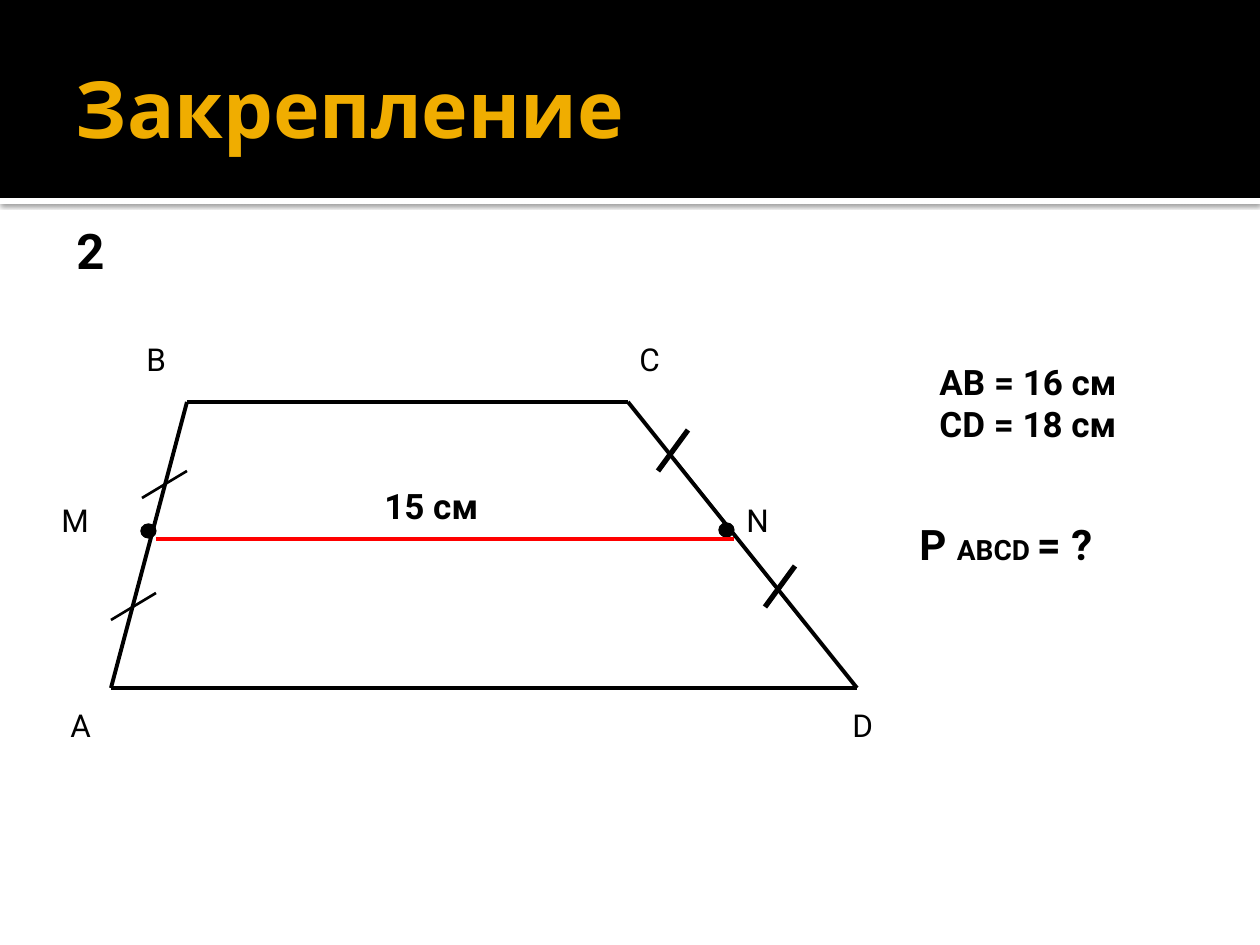
from dataclasses import dataclass

from lxml.etree import SubElement
from pptx import Presentation
from pptx.dml.color import RGBColor as Rgb
from pptx.enum.shapes import MSO_CONNECTOR as Conn, MSO_SHAPE as Kind
from pptx.enum.text import MSO_ANCHOR as Anchor, MSO_AUTO_SIZE as Fit, PP_ALIGN as Align
from pptx.oxml.ns import qn
from pptx.util import Pt


@dataclass(frozen=True)
class Theme:
    black: str = "000000"
    white: str = "FFFFFF"
    gold: str = "F0AD00"
    red: str = "FF0000"
    head: str = "Cabin"
    body: str = "Roboto"
    title: int = 45
    number: int = 28
    ask: int = 24
    given: int = 20
    label: int = 18
    sub: int = 16
    thin: float = 1.5
    side: float = 2.25
    thick: float = 3


def px(n):
    return round(n * 914400 / 126)


class Board:
    def __init__(self, deck, theme):
        self.theme = theme
        self.slide = deck.slides.add_slide(deck.slide_layouts[5])
        self.shapes = self.slide.shapes

    def style(self, run, size, bold=False, color=None, face=None):
        look = {"size": Pt(size), "bold": bold, "name": face or self.theme.body}
        for key, value in look.items():
            setattr(run.font, key, value)
        run.font.color.rgb = Rgb.from_string(color or self.theme.black)

    def title(self, text, *box):
        item = self.shapes.title
        item.element.getparent().append(item.element)
        for key, value in zip(("left", "top", "width", "height"), box):
            setattr(item, key, px(value))
        frame = item.text_frame
        look = {"margin_left": px(13), "margin_top": px(6), "margin_right": px(6),
                "margin_bottom": px(6), "vertical_anchor": Anchor.MIDDLE,
                "word_wrap": True, "auto_size": Fit.NONE}
        for key, value in look.items():
            setattr(frame, key, value)
        para = frame.paragraphs[0]
        para.alignment = Align.LEFT
        run = para.add_run()
        run.text = text
        self.style(run, self.theme.title, True, self.theme.gold, self.theme.head)

    def text(self, lines, *box, bold=True, wrap=True):
        frame = self.shapes.add_textbox(*map(px, box)).text_frame
        frame.word_wrap = wrap
        frame.auto_size = Fit.SHAPE_TO_FIT_TEXT
        for i, line in enumerate(lines):
            para = frame.add_paragraph() if i else frame.paragraphs[0]
            for words, size in line:
                run = para.add_run()
                run.text = words
                self.style(run, size, bold)

    def label(self, name, x, y):
        self.text([[(name, self.theme.label)]], x, y, 60, 50, bold=False)

    def shape(self, kind, color, *box):
        item = self.shapes.add_shape(kind, *map(px, box))
        item.shadow.inherit = False
        item.fill.solid()
        item.fill.fore_color.rgb = Rgb.from_string(color)
        item.line.fill.background()
        return item

    def band(self, color, top, height, shade=False):
        item = self.shape(Kind.RECTANGLE, color, 0, top, 1260, height)
        if shade:
            effects = item.element.spPr.find(qn("a:effectLst"))
            cast = SubElement(effects, qn("a:outerShdw"), blurRad="31750",
                              dist="10160", dir="5400000", rotWithShape="0")
            tint = SubElement(cast, qn("a:srgbClr"), val=self.theme.black)
            SubElement(tint, qn("a:alpha"), val="60000")

    def dot(self, x, y):
        item = self.shape(Kind.FLOWCHART_CONNECTOR, self.theme.black, x, y, 15, 14)
        item.line.color.rgb = Rgb.from_string(self.theme.black)
        item.line.width = Pt(0.75)

    def line(self, start, end, width, color=None):
        item = self.shapes.add_connector(Conn.STRAIGHT, *map(px, start + end))
        item.line.color.rgb = Rgb.from_string(color or self.theme.black)
        item.line.width = Pt(width)
        SubElement(item.element.spPr, qn("a:effectLst"))


def main():
    deck = Presentation()
    deck.slide_width, deck.slide_height = px(1260), px(945)
    theme = Theme()
    board = Board(deck, theme)

    board.band(theme.white, 198, 6, shade=True)
    board.band(theme.black, 0, 198)
    board.title("Закрепление", 63, 21, 1134, 173)

    for name, x, y in (("M", 49, 495), ("N", 734, 495), ("A", 58, 700),
                       ("D", 840, 700), ("B", 134, 334), ("C", 627, 334)):
        board.label(name, x, y)
    for x, y in ((141, 524), (719, 523)):
        board.dot(x, y)

    a, b, c, d = (111, 688), (187, 402), (628, 402), (857, 688)
    for start, end in ((a, d), (c, d), (b, c), (b, a)):
        board.line(start, end, theme.side)
    for x, y in ((187, 471), (156, 593)):
        board.line((x, y), (x - 45, y + 27), theme.thin)
    board.line((156, 539), (734, 539), theme.side, theme.red)
    for x, y in ((688, 430), (795, 566)):
        board.line((x, y), (x - 30, y + 41), theme.thick)

    board.text([[("15 см", theme.given)]], 372, 478, 199, 54)
    board.text([[("AB = 16 см", theme.given)], [("CD = 18 см", theme.given)]],
               927, 354, 224, 97, wrap=False)
    board.text([[("P ", theme.ask), ("ABCD ", theme.sub), ("= ?", theme.ask)]],
               907, 512, 297, 63)
    board.text([[("2", theme.number)]], 64, 214, 89, 72)
    deck.save("out.pptx")


if __name__ == "__main__":
    main()
